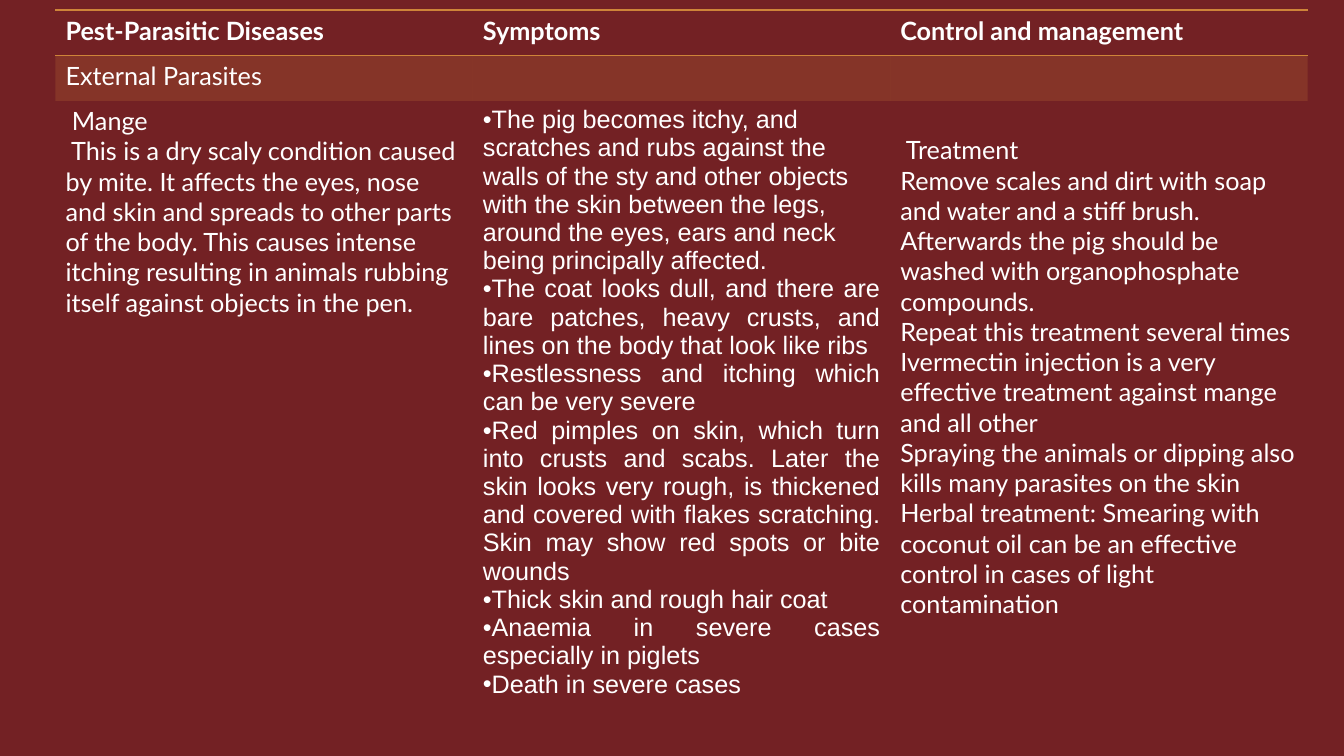
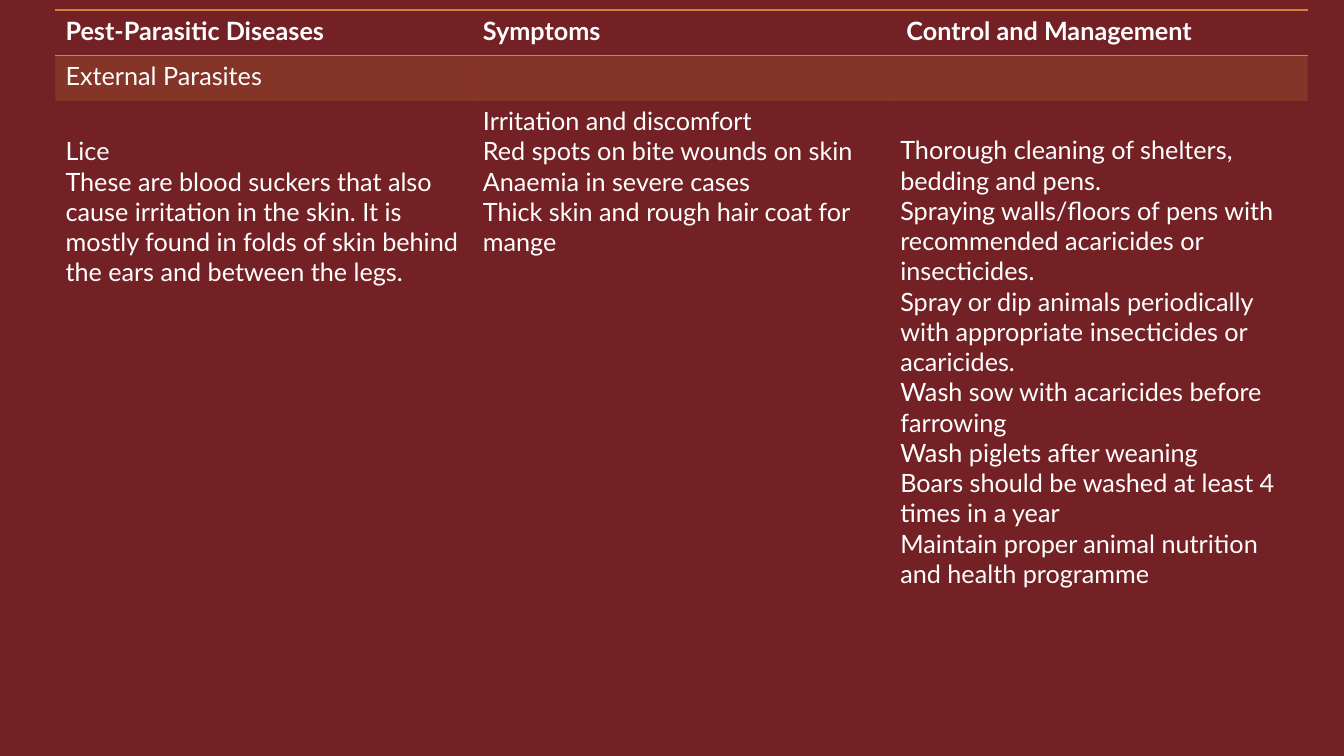
"""Build two table slides on external parasites of pigs."""
from dataclasses import dataclass

from lxml import etree
from pptx import Presentation
from pptx import util as u
from pptx.dml.color import RGBColor
from pptx.enum import text
from pptx.oxml import ns


@dataclass(frozen=True)
class Theme:
    """Colours, type and grid shared by all slides."""
    back: RGBColor = RGBColor.from_string("732124")
    ink: RGBColor = RGBColor.from_string("FFFFFF")
    accent: RGBColor = RGBColor.from_string("CE8439")
    band_alpha: int = 20
    font: str = "Lato"
    list_font: str = "Arial"
    size: int = 18
    rule: float = 1
    width: float = 13.33
    height: float = 7.5
    left: float = 0.55
    top: float = 0.1
    col: float = 4.14
    row: float = 0.45
    inset: float = 0.05
    lead: float = 0.29


def sub(parent, tag, **attrs):
    """Append a DrawingML child element."""
    return etree.SubElement(parent, ns.qn(tag), attrs)


def write(p, words, theme, font=None, bold=False, bullet=None, align=None):
    """Write formatted text into a paragraph."""
    if bullet:
        pPr = p._p.get_or_add_pPr()
        pPr.set("marL", "0")
        pPr.set("indent", "0")
        sub(pPr, "a:buFont", typeface=theme.list_font)
        sub(pPr, "a:buChar", char=bullet)
    if align is not None:
        p.alignment = align
    r = p.add_run()
    r.text = words
    r.font.name = font or theme.font
    r.font.size = u.Pt(theme.size)
    r.font.bold = bold
    r.font.color.rgb = theme.ink


class Deck:
    """Hold the style and the current slide."""

    ROWS = (1, 1, 14.3)
    PLAIN_STYLE = "{2D5ABB26-0587-4C30-8999-92F81FD0307C}"

    def __init__(self, theme):
        """Start a presentation with the shared background."""
        self.theme = theme
        self.prs = Presentation()
        self.prs.slide_width = u.Inches(theme.width)
        self.prs.slide_height = u.Inches(theme.height)
        fill = self.prs.slide_master.background.fill
        fill.solid()
        fill.fore_color.rgb = theme.back
        self.slide = None

    def add_slide(self):
        """Add a blank slide and make it current."""
        self.slide = self.prs.slides.add_slide(self.prs.slide_layouts[6])

    def rule(self, cell, side):
        """Draw a rule on one side of a cell."""
        ln = sub(cell._tc.get_or_add_tcPr(), side, w=str(u.Pt(self.theme.rule)))
        sub(sub(ln, "a:solidFill"), "a:srgbClr", val=str(self.theme.accent))

    def band(self, cell):
        """Tint a cell with the translucent accent."""
        cell.fill.solid()
        cell.fill.fore_color.rgb = self.theme.accent
        clr = next(cell._tc.tcPr.iter(ns.qn("a:srgbClr")))
        sub(clr, "a:alpha", val=str(self.theme.band_alpha * 1000))

    def fill_cell(self, cell, lines, lead=0, **fmt):
        """Write lines into a cell, lowered by an optional lead."""
        cell.margin_top = u.Inches(self.theme.inset + lead)
        tf = cell.text_frame
        for i, line in enumerate(lines):
            p = tf.add_paragraph() if i else tf.paragraphs[0]
            style = dict(fmt)
            if i == 0:
                style.pop("align", None)
            write(p, line, self.theme, **style)

    def table(self, heads, group, columns):
        """Add the disease table with head, group band and body."""
        t = self.theme
        sp = self.slide.shapes.add_table(
            len(self.ROWS), len(heads), u.Inches(t.left), u.Inches(t.top),
            u.Inches(t.col * len(heads)), u.Inches(t.row * sum(self.ROWS)))
        tbl = sp.table
        tbl.horz_banding = False
        tbl._tbl.tblPr.find(ns.qn("a:tableStyleId")).text = self.PLAIN_STYLE
        for row, share in zip(tbl.rows, self.ROWS):
            row.height = u.Inches(t.row * share)
        for i, (head, body) in enumerate(zip(heads, columns)):
            tbl.columns[i].width = u.Inches(t.col)
            top = tbl.cell(0, i)
            self.fill_cell(top, [head], bold=True)
            for side in ("a:lnT", "a:lnB"):
                self.rule(top, side)
            self.band(tbl.cell(1, i))
            self.fill_cell(tbl.cell(2, i), **body)
        self.fill_cell(tbl.cell(1, 0), [group])


def main():
    """Build and save both slides."""
    theme = Theme()
    deck = Deck(theme)
    group = "External Parasites"
    names = ("Pest-Parasitic Diseases", "Symptoms")

    mange = dict(lines=[
        " Mange",
        " This is a dry scaly condition caused by mite. It affects the eyes, "
        "nose and skin and spreads to other parts of the body. This causes "
        "intense itching resulting in animals rubbing itself against objects "
        "in the pen.",
    ])
    mange_signs = dict(
        bullet="•", font=theme.list_font, align=text.PP_ALIGN.JUSTIFY, lines=[
            "The pig becomes itchy, and scratches and rubs against the walls "
            "of the sty and other objects with the skin between the legs, "
            "around the eyes, ears and neck being principally affected.",
            "The coat looks dull, and there are bare patches, heavy crusts, "
            "and lines on the body that look like ribs",
            "Restlessness and itching which can be very severe",
            "Red pimples on skin, which turn into crusts and scabs. Later the "
            "skin looks very rough, is thickened and covered with flakes "
            "scratching. Skin may show red spots or bite wounds",
            "Thick skin and rough hair coat",
            "Anaemia in severe cases especially in piglets",
            "Death in severe cases",
        ])
    mange_control = dict(lead=theme.lead, lines=[
        " Treatment",
        "Remove scales and dirt with soap and water and a stiff brush.",
        "Afterwards the pig should be washed with organophosphate compounds.",
        "Repeat this treatment several times",
        "Ivermectin injection is a very effective treatment against mange "
        "and all other",
        "Spraying the animals or dipping also kills many parasites on the skin",
        "Herbal treatment: Smearing with coconut oil can be an effective "
        "control in cases of light contamination",
    ])
    deck.add_slide()
    deck.table((*names, "Control and management"), group,
               (mange, mange_signs, mange_control))

    lice = dict(lead=theme.lead + 0.01, lines=[
        "Lice",
        "These are blood suckers that also cause irritation in the skin. It "
        "is mostly found in folds of skin behind the ears and between the "
        "legs.",
    ])
    lice_signs = dict(lines=[
        "Irritation and discomfort",
        "Red spots on bite wounds on skin",
        "Anaemia in severe cases",
        "Thick skin and rough hair coat for mange",
    ])
    lice_control = dict(lead=theme.lead, lines=[
        "Thorough cleaning of shelters, bedding and pens.",
        "Spraying walls/floors of pens with recommended acaricides or "
        "insecticides.",
        "Spray or dip animals periodically with appropriate insecticides or "
        "acaricides.",
        "Wash sow with acaricides before farrowing",
        "Wash piglets after weaning",
        "Boars should be washed at least 4 times in a year",
        "Maintain proper animal nutrition and health programme",
    ])
    deck.add_slide()
    deck.table((*names, " Control and Management"), group,
               (lice, lice_signs, lice_control))

    deck.prs.save("out.pptx")


if __name__ == "__main__":
    main()
